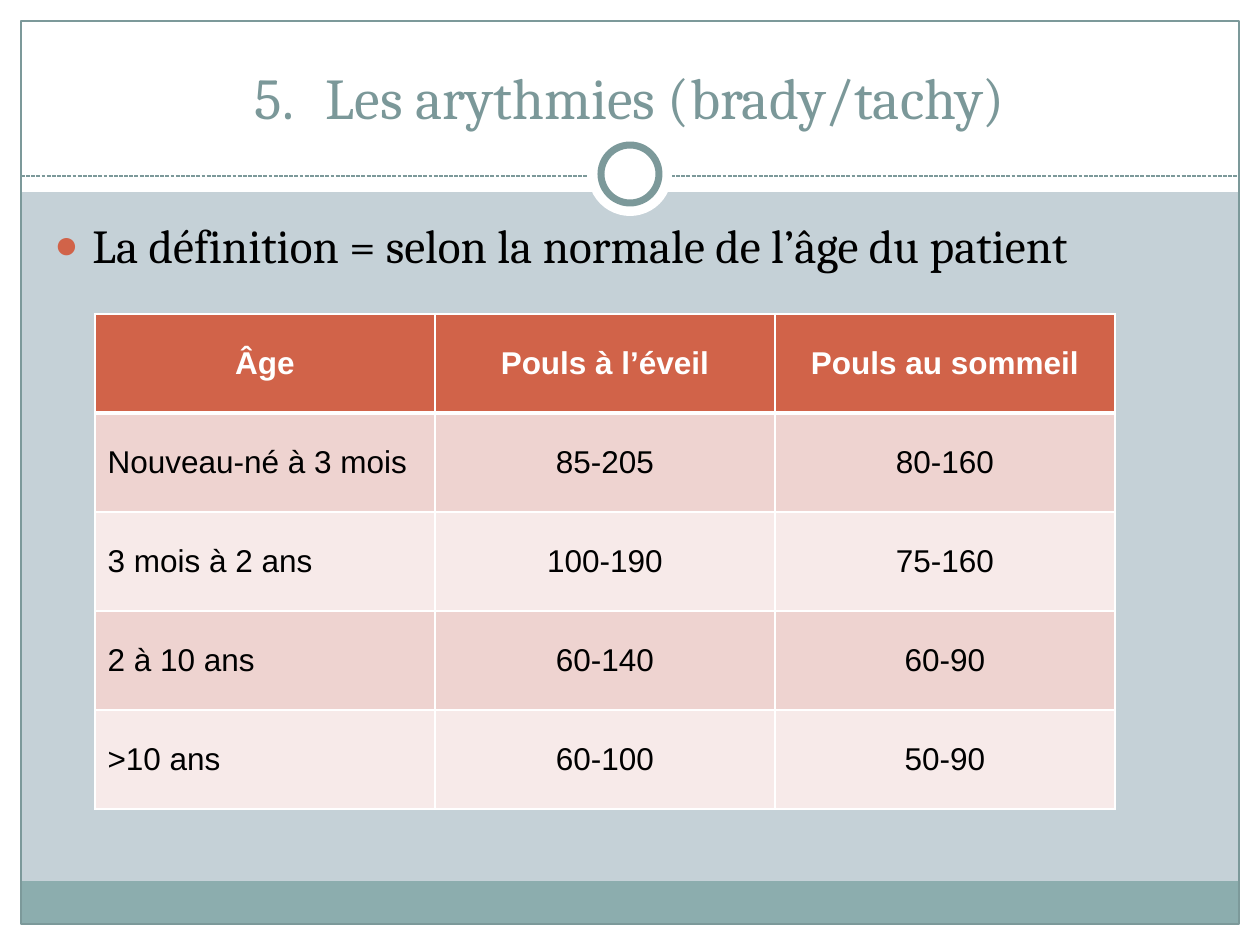
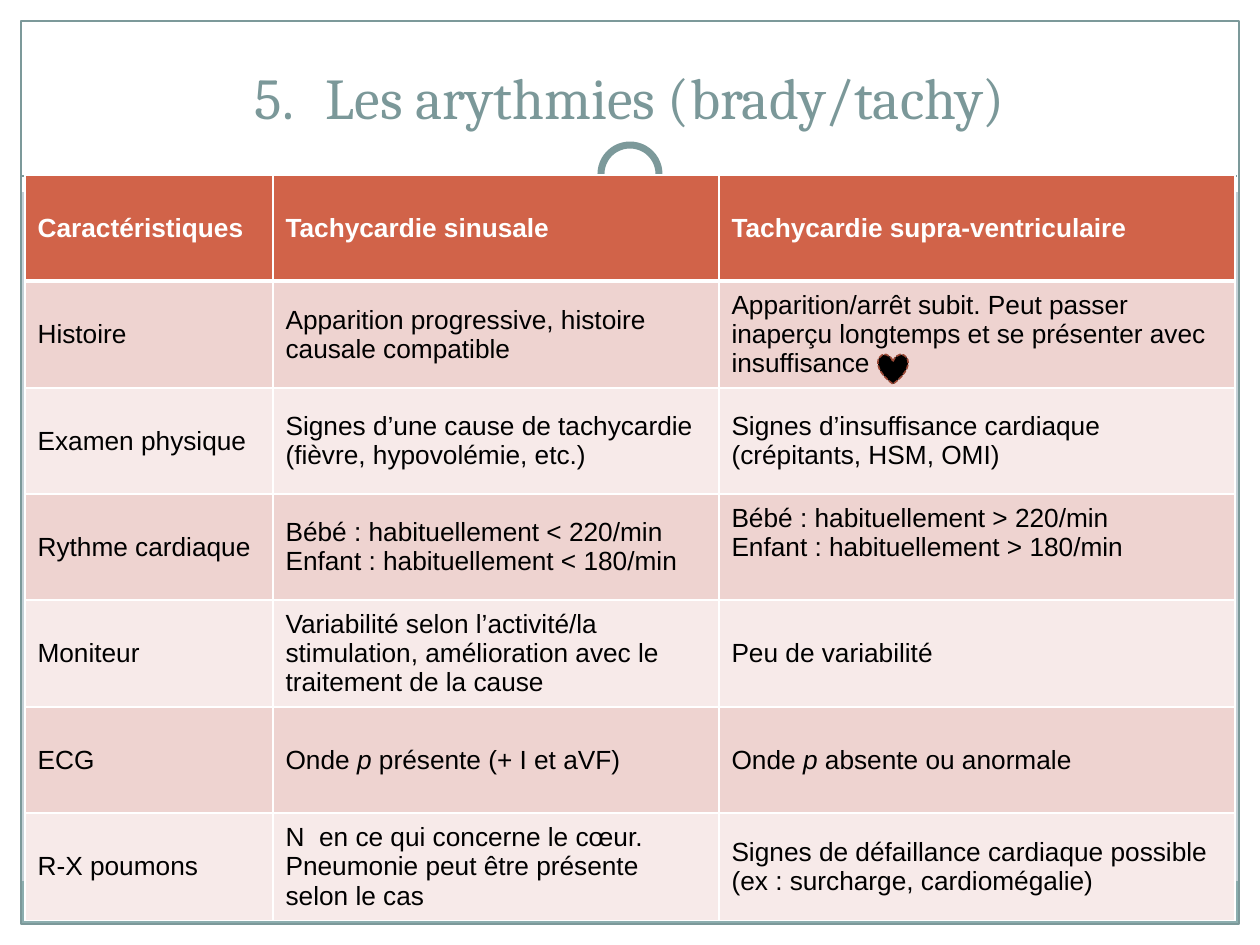
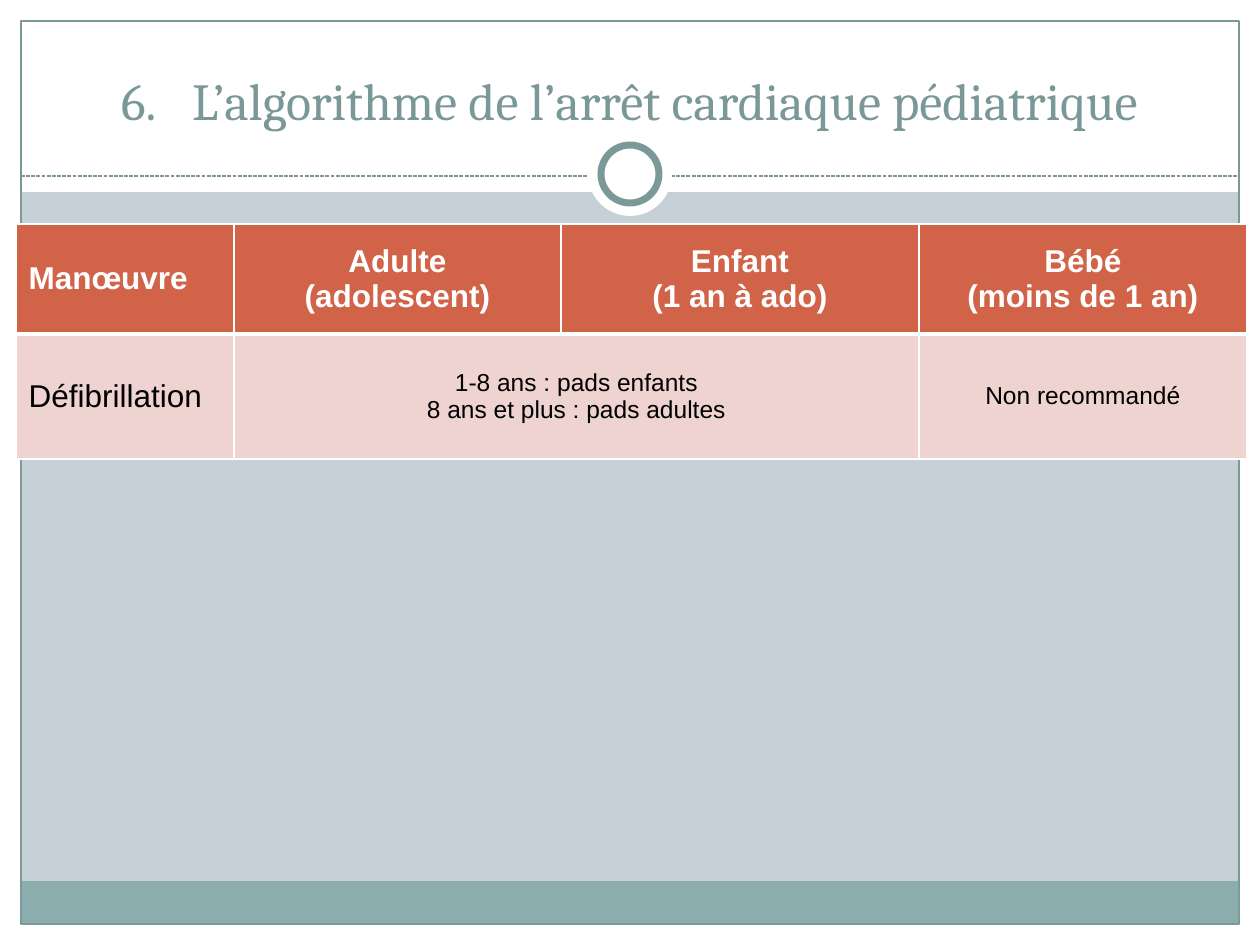
from dataclasses import dataclass

from lxml import etree
from pptx import Presentation
from pptx import util as u
from pptx.dml.color import RGBColor
from pptx.enum import dml, shapes, text
from pptx.oxml import ns

PX_PER_INCH = 126
WIDTH, HEIGHT = 1260, 945
EDGE = 21  # white margin around the framed area


@dataclass(frozen=True)
class Theme:
    background: str = "C5D1D7"
    white: str = "FFFFFF"
    black: str = "000000"
    band: str = "8CADAE"
    outline: str = "7C999A"
    title: str = "7B9899"
    accent: str = "D16349"
    rows: tuple = ("EED3D0", "F7EAE9")
    heart_line: str = "9B4936"
    heading_font: str = "Cambria"
    table_font: str = "Arial"
    title_size: float = 33
    long_title_size: float = 29.7
    body_size: float = 27
    table_size: float = 18
    dense_size: float = 15
    detail_size: float = 14


THEME = Theme()
ALIGN = {"l": text.PP_ALIGN.LEFT, "c": text.PP_ALIGN.CENTER}


def px(length):
    return u.Emu(round(length * u.Inches(1) / PX_PER_INCH))


def rgb(color):
    return RGBColor.from_string(color)


def sub(parent, tag, **attributes):
    return etree.SubElement(parent, ns.qn(tag), attributes)


def add_span(para, words, font, size, color, bold=False, italic=False):
    span = para.add_run()
    span.text = words
    span.font.name = font
    span.font.size = u.Pt(size)
    span.font.color.rgb = rgb(color)
    span.font.bold = bold
    span.font.italic = italic


def set_line(line, color, width, dashed=False):
    line.color.rgb = rgb(color)
    line.width = u.Pt(width)
    if dashed:
        line.dash_style = dml.MSO_LINE.SQUARE_DOT


def add_figure(page, kind, at, fill=None, line=None):
    figure = page.shapes.add_shape(kind, *map(px, at))
    figure.shadow.inherit = False
    if fill:
        figure.fill.solid()
        figure.fill.fore_color.rgb = rgb(fill)
    else:
        figure.fill.background()
    if line:
        set_line(figure.line, *line)
    else:
        figure.line.fill.background()


def add_frame(page):
    """Draw the margins, footer band, outline and ring shared by all slides."""
    rectangle, oval = shapes.MSO_SHAPE.RECTANGLE, shapes.MSO_SHAPE.OVAL
    inner = WIDTH - 2 * EDGE
    margins = [(0, HEIGHT - EDGE, WIDTH, EDGE), (0, 0, WIDTH, 192),
               (0, 0, EDGE, HEIGHT), (WIDTH - EDGE, 0, EDGE, HEIGHT)]
    for at in margins:
        add_figure(page, rectangle, at, THEME.white)
    add_figure(page, rectangle, (EDGE, 881, inner, 43), THEME.band)
    add_figure(page, rectangle, (EDGE, EDGE, inner, HEIGHT - 2 * EDGE),
               line=(THEME.outline, 0.75))
    rule = page.shapes.add_connector(
        shapes.MSO_CONNECTOR.STRAIGHT, px(EDGE), px(176), px(WIDTH - EDGE), px(176))
    set_line(rule.line, THEME.outline, 0.75, True)
    sub(rule._element.spPr, "a:effectLst")
    add_figure(page, oval, (588, 132, 84, 84), THEME.white)
    add_figure(page, oval, (601, 145, 58, 58), THEME.white, (THEME.outline, 4))


def add_text_box(page, at, anchor):
    box = page.shapes.add_textbox(*map(px, at))
    box.text_frame.word_wrap = True
    box.text_frame.vertical_anchor = anchor
    return box.text_frame.paragraphs[0]


def set_hanging(para, indent):
    properties = para._p.get_or_add_pPr()
    properties.set("marL", str(px(indent)))
    properties.set("indent", str(-px(indent)))
    return properties


def add_title(page, number, words, size=THEME.title_size):
    para = add_text_box(page, (42, 32, 1176, 105), text.MSO_ANCHOR.BOTTOM)
    para.alignment = ALIGN["c"]
    properties = set_hanging(para, 71)
    sub(properties, "a:buFont", typeface=THEME.heading_font)
    sub(properties, "a:buAutoNum", type="arabicPeriod", startAt=str(number))
    add_span(para, words, THEME.heading_font, size, THEME.title)


def add_bullet(page, words):
    para = add_text_box(page, (42, 210, 1172, 630), text.MSO_ANCHOR.TOP)
    para.space_before = u.Pt(THEME.body_size * 0.2)
    properties = set_hanging(para, 38)
    color = sub(properties, "a:buClr")
    sub(color, "a:srgbClr", val=THEME.accent)
    sub(properties, "a:buSzPct", val="85000")
    sub(properties, "a:buFont", typeface=THEME.table_font)
    sub(properties, "a:buChar", char="●")
    add_span(para, words, THEME.heading_font, THEME.body_size, THEME.black)


def set_borders(cell, row):
    """Give white edges, heavier where the header meets the first row."""
    properties = cell._tc.get_or_add_tcPr()
    heavy = {0: "a:lnB", 1: "a:lnT"}.get(row)
    for place, tag in enumerate(("a:lnL", "a:lnR", "a:lnT", "a:lnB")):
        edge = etree.Element(ns.qn(tag), w=str(u.Pt(3 if tag == heavy else 1)))
        sub(sub(edge, "a:solidFill"), "a:srgbClr", val=THEME.white)
        properties.insert(place, edge)


def fill_cell(cell, words, row, size, align):
    """Write one paragraph per line; words between asterisks are italic."""
    header = row == 0
    cell.fill.solid()
    cell.fill.fore_color.rgb = rgb(THEME.accent if header else THEME.rows[(row - 1) % 2])
    set_borders(cell, row)
    cell.vertical_anchor = text.MSO_ANCHOR.MIDDLE
    for index, line in enumerate(words.split("\n")):
        frame = cell.text_frame
        para = frame.add_paragraph() if index else frame.paragraphs[0]
        para.alignment = ALIGN[align]
        for part, piece in enumerate(line.split("*")):
            if piece:
                add_span(para, piece, THEME.table_font, size,
                         THEME.white if header else THEME.black, header, part % 2 == 1)


def add_grid(page, corner, widths, heights, rows, header_align, body_align,
             header_size, body_sizes):
    """Add a table; alignments and body sizes are given per column."""
    grid = page.shapes.add_table(len(rows), len(widths), *map(
        px, (*corner, sum(widths), sum(heights)))).table
    grid.horz_banding = False
    for column, width in zip(grid.columns, widths):
        column.width = px(width)
    for row, height in zip(grid.rows, heights):
        row.height = px(height)
    for r, row in enumerate(rows):
        aligns = body_align if r else header_align
        for c, words in enumerate(row):
            size = body_sizes[c] if r else header_size
            fill_cell(grid.cell(r, c), words, r, size, aligns[c])
    return grid


def add_page(deck):
    page = deck.slides.add_slide(deck.slide_layouts[6])
    add_frame(page)
    return page


def add_pulse_page(deck):
    page = add_page(deck)
    add_title(page, 5, "Les arythmies (brady/tachy)")
    add_bullet(page, "La définition = selon la normale de l’âge du patient")
    rows = [
        ("Âge", "Pouls à l’éveil", "Pouls au sommeil"),
        ("Nouveau-né à 3 mois", "85-205", "80-160"),
        ("3 mois à 2 ans", "100-190", "75-160"),
        ("2 à 10 ans", "60-140", "60-90"),
        (">10 ans", "60-100", "50-90"),
    ]
    add_grid(page, (95, 314), [340] * 3, [99] * len(rows), rows, "ccc", "lcc",
             THEME.table_size, [THEME.table_size] * 3)


def add_tachycardia_page(deck):
    page = add_page(deck)
    add_title(page, 5, "Les arythmies (brady/tachy)")
    rows = [
        ("Caractéristiques", "Tachycardie sinusale", "Tachycardie supra-ventriculaire"),
        ("Histoire", "Apparition progressive, histoire causale compatible",
         "Apparition/arrêt subit. Peut passer inaperçu longtemps et se présenter "
         "avec insuffisance"),
        ("Examen physique", "Signes d’une cause de tachycardie (fièvre, hypovolémie, etc.)",
         "Signes d’insuffisance cardiaque (crépitants, HSM, OMI)"),
        ("Rythme cardiaque",
         "Bébé : habituellement < 220/min\nEnfant : habituellement < 180/min",
         "Bébé : habituellement > 220/min\nEnfant : habituellement > 180/min"),
        ("Moniteur",
         "Variabilité selon l’activité/la stimulation, amélioration avec le "
         "traitement de la cause",
         "Peu de variabilité"),
        ("ECG", "Onde *p* présente (+ I et aVF)", "Onde *p* absente ou anormale"),
        ("R-X poumons",
         "N  en ce qui concerne le cœur. Pneumonie peut être présente selon le cas",
         "Signes de défaillance cardiaque possible (ex : surcharge, cardiomégalie)"),
    ]
    grid = add_grid(page, (25, 175), [248, 446, 516], [106] * len(rows), rows,
                    "lll", "lll", THEME.dense_size, [THEME.dense_size] * 3)
    grid.cell(3, 2).margin_bottom = px(35)
    add_figure(page, shapes.MSO_SHAPE.HEART, (878, 354, 30, 30), THEME.black,
               (THEME.heart_line, 0.9, True))


def add_arrest_page(deck):
    page = add_page(deck)
    add_title(page, 6, "L’algorithme de l’arrêt cardiaque pédiatrique",
              THEME.long_title_size)
    rows = [
        ("Manœuvre", "Adulte\n(adolescent)", "Enfant\n(1 an à ado)",
         "Bébé\n(moins de 1 an)"),
        ("Défibrillation", "1-8 ans : pads enfants\n8 ans et plus : pads adultes", "",
         "Non recommandé"),
    ]
    grid = add_grid(page, (16, 224), [218, 327, 358, 328], [110, 125], rows,
                    "lccc", "lccc", THEME.table_size,
                    [THEME.table_size] + [THEME.detail_size] * 3)
    grid.cell(1, 1).merge(grid.cell(1, 2))


def main():
    deck = Presentation()
    deck.slide_width, deck.slide_height = px(WIDTH), px(HEIGHT)
    backdrop = deck.slide_master.background.fill
    backdrop.solid()
    backdrop.fore_color.rgb = rgb(THEME.background)
    add_pulse_page(deck)
    add_tachycardia_page(deck)
    add_arrest_page(deck)
    deck.save("out.pptx")


if __name__ == "__main__":
    main()
